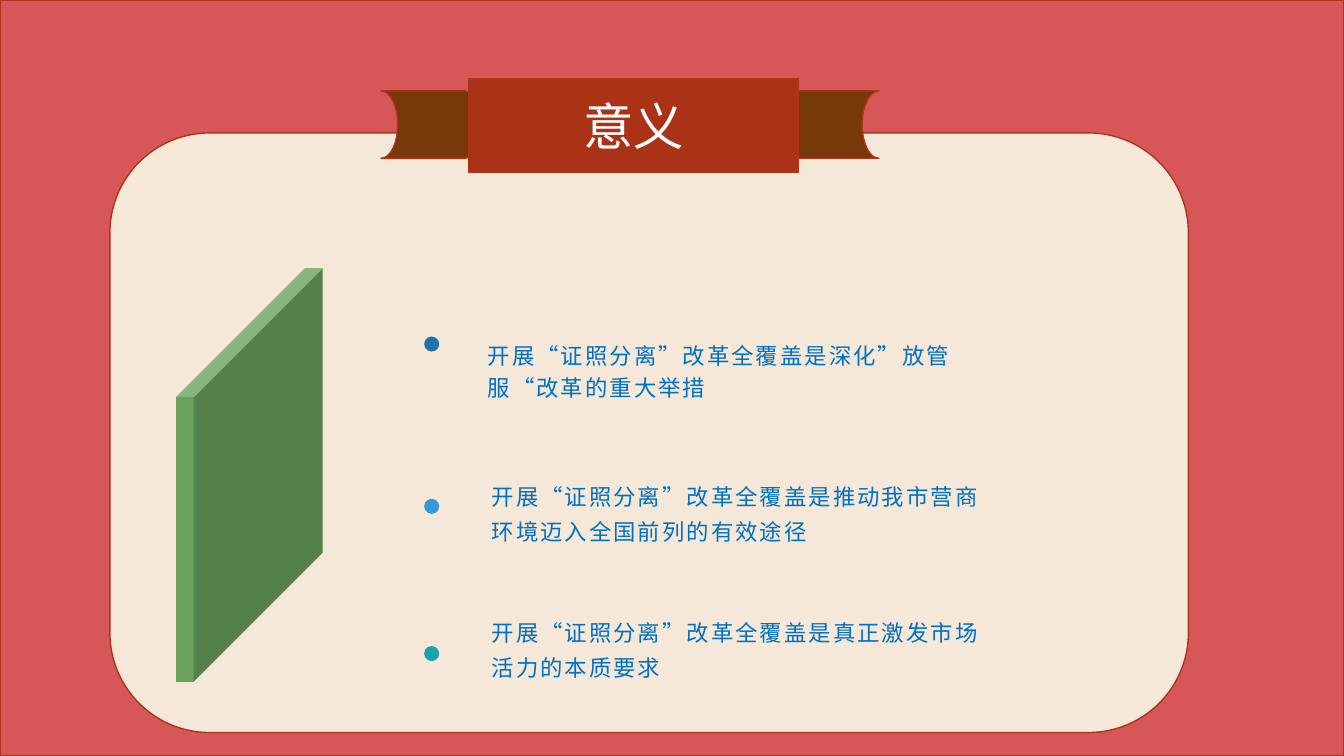
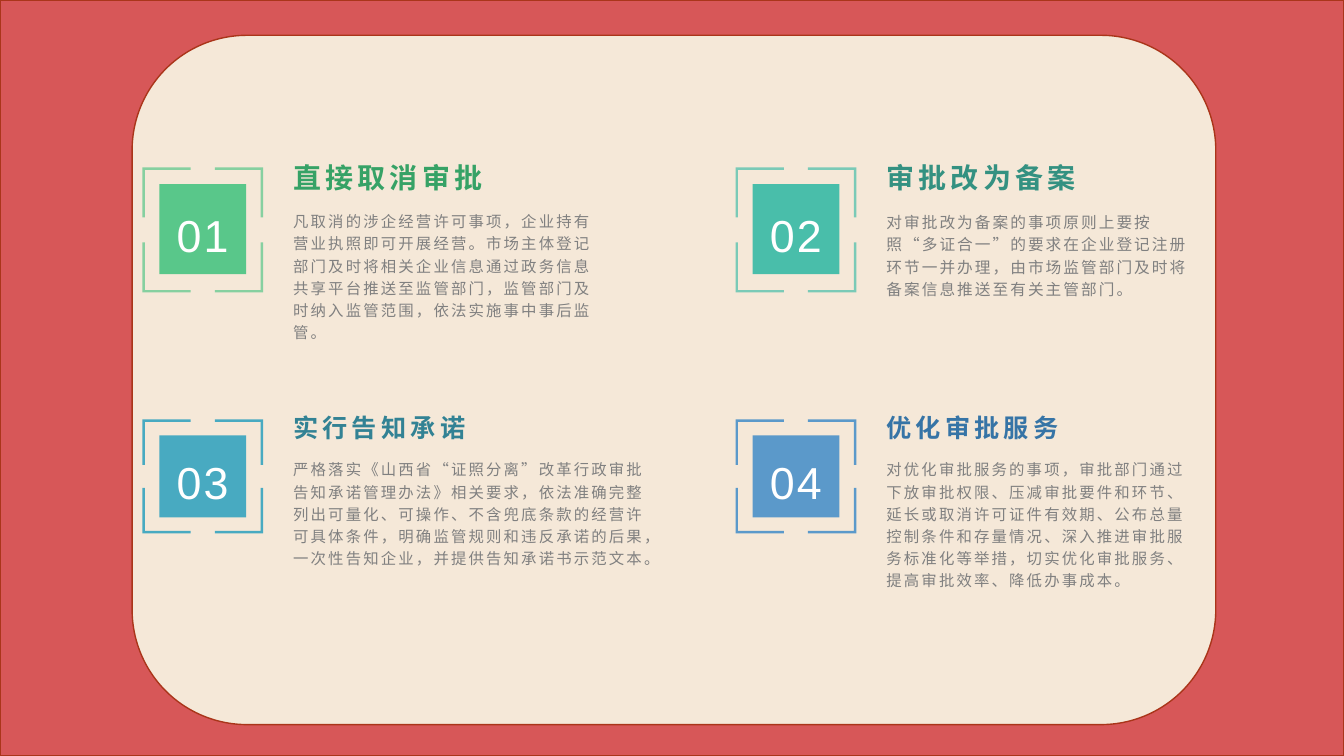
from itertools import product

from lxml import etree
from pptx import Presentation
from pptx.dml.color import RGBColor
from pptx.enum.lang import MSO_LANGUAGE_ID
from pptx.enum.shapes import MSO_SHAPE
from pptx.enum.text import MSO_ANCHOR, PP_ALIGN
from pptx.oxml.ns import qn
from pptx.util import Cm, Pt

RECTANGLE = MSO_SHAPE.RECTANGLE
PANEL = MSO_SHAPE.FLOWCHART_ALTERNATE_PROCESS
RIBBON_TAIL = MSO_SHAPE.FLOWCHART_STORED_DATA
CUBE = MSO_SHAPE.CUBE
OVAL = MSO_SHAPE.OVAL
TOP, MIDDLE, BOTTOM = MSO_ANCHOR.TOP, MSO_ANCHOR.MIDDLE, MSO_ANCHOR.BOTTOM
LEFT, CENTER = PP_ALIGN.LEFT, PP_ALIGN.CENTER
CHINESE = MSO_LANGUAGE_ID.SIMPLIFIED_CHINESE

FONT = "Arial"
WIDTH, HEIGHT = 33.87, 19.05
RED, CREAM, EDGE = "D75758", "F5E8D8", "AA351A"
RIBBON, RIBBON_BACK = "AA3217", "77380A"
GREEN, BLUE, GREY, WHITE = "69A35B", "0070C0", "808080", "FFFFFF"

MEANING_TITLE = "意义"
MEANING_PANEL = (2.77, 3.35, 27.18, 15.11)
DOT_LEFT, DOT_SIZE = 10.69, 0.38
MEANINGS = [
    {"text": "开展“证照分离”改革全覆盖是深化”放管服“改革的重大举措",
     "box": (12.04, 8.48, 13.56, 0.97), "anchor": TOP, "insets": (0, 0.13),
     "spacing": 1.2, "dot": "1F74AD", "dot_top": 8.48},
    {"text": "开展“证照分离”改革全覆盖是推动我市营商环境迈入全国前列的有效途径",
     "box": (12.14, 11.81, 13.34, 1.93), "anchor": BOTTOM, "insets": (0.13, 0),
     "spacing": 1.3, "dot": "3498DB", "dot_top": 12.57},
    {"text": "开展“证照分离”改革全覆盖是真正激发市场活力的本质要求",
     "box": (12.14, 16.08, 13.34, 1.09), "anchor": BOTTOM, "insets": (0.13, 0),
     "spacing": 1.3, "dot": "1AA3AA", "dot_top": 16.28},
]

MEASURE_PANEL = (3.33, 0.89, 27.31, 17.37)
COLUMNS = [3.59, 18.54]
ROWS = [
    {"frame": (4.22, 3.15), "square": (4.64, 2.27), "heading": (3.71, 1.35),
     "body": (5.13, 3.12), "heading_size": 20, "alpha": 71},
    {"frame": (10.57, 2.87), "square": (10.97, 2.07), "heading": (10.08, 1.24),
     "body": (11.38, 2.82), "heading_size": 18, "alpha": 100},
]
FRAME_WIDTH, SQUARE_WIDTH, TEXT_OFFSET, HEADING_WIDTH = 3.04, 2.19, 3.55, 8.31
ARM_SHARE, THICKNESS = 0.4, 0.06
MEASURES = [
    {"heading": "直接取消审批", "fill": "59C78A", "color": "36A266", "size": 11, "width": 8.31,
     "body": "凡取消的涉企经营许可事项，企业持有营业执照即可开展经营。市场主体登记部门及时将相关企业信息"
             "通过政务信息共享平台推送至监管部门，监管部门及时纳入监管范围，依法实施事中事后监管。"},
    {"heading": "审批改为备案", "fill": "49BEAA", "color": "349181", "size": 11.2, "width": 8.31,
     "body": "对审批改为备案的事项原则上要按照“多证合一”的要求在企业登记注册环节一并办理，"
             "由市场监管部门及时将备案信息推送至有关主管部门。"},
    {"heading": "实行告知承诺", "fill": "48AAC1", "color": "328294", "size": 11, "width": 9.4,
     "body": "严格落实《山西省“证照分离”改革行政审批告知承诺管理办法》相关要求，依法准确完整列出可量化、"
             "可操作、不含兜底条款的经营许可具体条件，明确监管规则和违反承诺的后果，一次性告知企业，"
             "并提供告知承诺书示范文本。"},
    {"heading": "优化审批服务", "fill": "5B99CA", "color": "3674A6", "size": 11, "width": 8.31,
     "body": "对优化审批服务的事项，审批部门通过下放审批权限、压减审批要件和环节、延长或取消许可证件有效期、"
             "公布总量控制条件和存量情况、深入推进审批服务标准化等举措，切实优化审批服务、提高审批效率、"
             "降低办事成本。"},
]


def rgb(value):
    return RGBColor.from_string(value)


def paint(shape, fill, line=None):
    shape.shadow.inherit = False
    shape.fill.solid()
    shape.fill.fore_color.rgb = rgb(fill)
    if line:
        shape.line.color.rgb = rgb(line)
        shape.line.width = Pt(1)
    else:
        shape.line.fill.background()


def add_shape(shapes, kind, box, fill, line=None):
    shape = shapes.add_shape(kind, *map(Cm, box))
    paint(shape, fill, line)
    return shape


def write(shape, text, size, color, anchor=TOP, align=LEFT, line_spacing=1.2,
          tracking=0, bold=False, insets=(0.13, 0.13)):
    frame = shape.text_frame
    frame.word_wrap = True
    frame.vertical_anchor = anchor
    frame.margin_top, frame.margin_bottom = map(Cm, insets)
    frame.text = text
    paragraph = frame.paragraphs[0]
    paragraph.alignment = align
    paragraph.line_spacing = line_spacing
    run = paragraph.runs[0]
    run.font.name = FONT
    run.font.size = Pt(size)
    run.font.bold = bold
    run.font.color.rgb = rgb(color)
    run.font.language_id = CHINESE
    run._r.get_or_add_rPr().set("spc", str(int(tracking * 100)))


def add_text(slide, box, text, size, color, **style):
    write(slide.shapes.add_textbox(*map(Cm, box)), text, size, color, **style)


def add_base(presentation, panel):
    slide = presentation.slides.add_slide(presentation.slide_layouts[6])
    add_shape(slide.shapes, RECTANGLE, (0, 0, WIDTH, HEIGHT), RED, EDGE)
    add_shape(slide.shapes, PANEL, panel, CREAM, EDGE)
    return slide


def add_ribbon(slide, title):
    shapes = slide.shapes.add_group_shape().shapes
    for left, rotation in ((19.61, 0), (9.6, 180)):
        tail = add_shape(shapes, RIBBON_TAIL, (left, 2.29, 2.54, 1.7), RIBBON_BACK, EDGE)
        tail.rotation = rotation
    band = add_shape(shapes, RECTANGLE, (11.81, 1.98, 8.31, 2.36), RIBBON, EDGE)
    write(band, title, 36, WHITE, anchor=MIDDLE, align=CENTER, line_spacing=1)


def add_corner_frame(slide, left, top, width, height, color, alpha):
    builder = None
    for side_x, side_y in product((0, 1), repeat=2):
        corner_x, corner_y = left + side_x * width, top + side_y * height
        step_x, step_y = 1 - 2 * side_x, 1 - 2 * side_y
        arm_x, arm_y = ARM_SHARE * width, ARM_SHARE * height
        outline = [(0, 0), (arm_x, 0), (arm_x, THICKNESS), (THICKNESS, THICKNESS),
                   (THICKNESS, arm_y), (0, arm_y)]
        points = [(Cm(corner_x + step_x * x), Cm(corner_y + step_y * y)) for x, y in outline]
        if builder is None:
            builder = slide.shapes.build_freeform(*points[0])
        else:
            builder.move_to(*points[0])
        builder.add_line_segments(points[1:], close=True)
    frame = builder.convert_to_shape()
    paint(frame, color)
    if alpha < 100:
        fill_color = frame._element.spPr.find(qn("a:solidFill"))[0]
        etree.SubElement(fill_color, qn("a:alpha")).set("val", str(alpha * 1000))


def build_meaning(presentation):
    slide = add_base(presentation, MEANING_PANEL)
    add_ribbon(slide, MEANING_TITLE)
    cube = add_shape(slide.shapes, CUBE, (4.44, 6.76, 3.69, 10.42), GREEN)
    cube.adjustments[0] = 0.88
    for item in MEANINGS:
        add_shape(slide.shapes, OVAL, (DOT_LEFT, item["dot_top"], DOT_SIZE, DOT_SIZE), item["dot"])
        add_text(slide, item["box"], item["text"], 16, BLUE, anchor=item["anchor"],
                 line_spacing=item["spacing"], tracking=1.5, insets=item["insets"])


def build_measures(presentation):
    slide = add_base(presentation, MEASURE_PANEL)
    for number, (measure, (row, left)) in enumerate(zip(MEASURES, product(ROWS, COLUMNS)), 1):
        square_left = left + (FRAME_WIDTH - SQUARE_WIDTH) / 2
        square_top, square_height = row["square"]
        square = add_shape(slide.shapes, RECTANGLE,
                           (square_left, square_top, SQUARE_WIDTH, square_height), measure["fill"])
        write(square, f"{number:02}", 32, WHITE, anchor=MIDDLE, align=CENTER, tracking=1.5)
        frame_top, frame_height = row["frame"]
        add_corner_frame(slide, left, frame_top, FRAME_WIDTH, frame_height,
                         measure["fill"], row["alpha"])
        text_left = left + TEXT_OFFSET
        heading_top, heading_height = row["heading"]
        add_text(slide, (text_left, heading_top, HEADING_WIDTH, heading_height),
                 measure["heading"], row["heading_size"], measure["color"],
                 anchor=MIDDLE, tracking=3, bold=True)
        body_top, body_height = row["body"]
        add_text(slide, (text_left, body_top, measure["width"], body_height),
                 measure["body"], measure["size"], GREY, tracking=1.5)


def main():
    presentation = Presentation()
    presentation.slide_width = Cm(WIDTH)
    presentation.slide_height = Cm(HEIGHT)
    build_meaning(presentation)
    build_measures(presentation)
    presentation.save("out.pptx")


if __name__ == "__main__":
    main()
